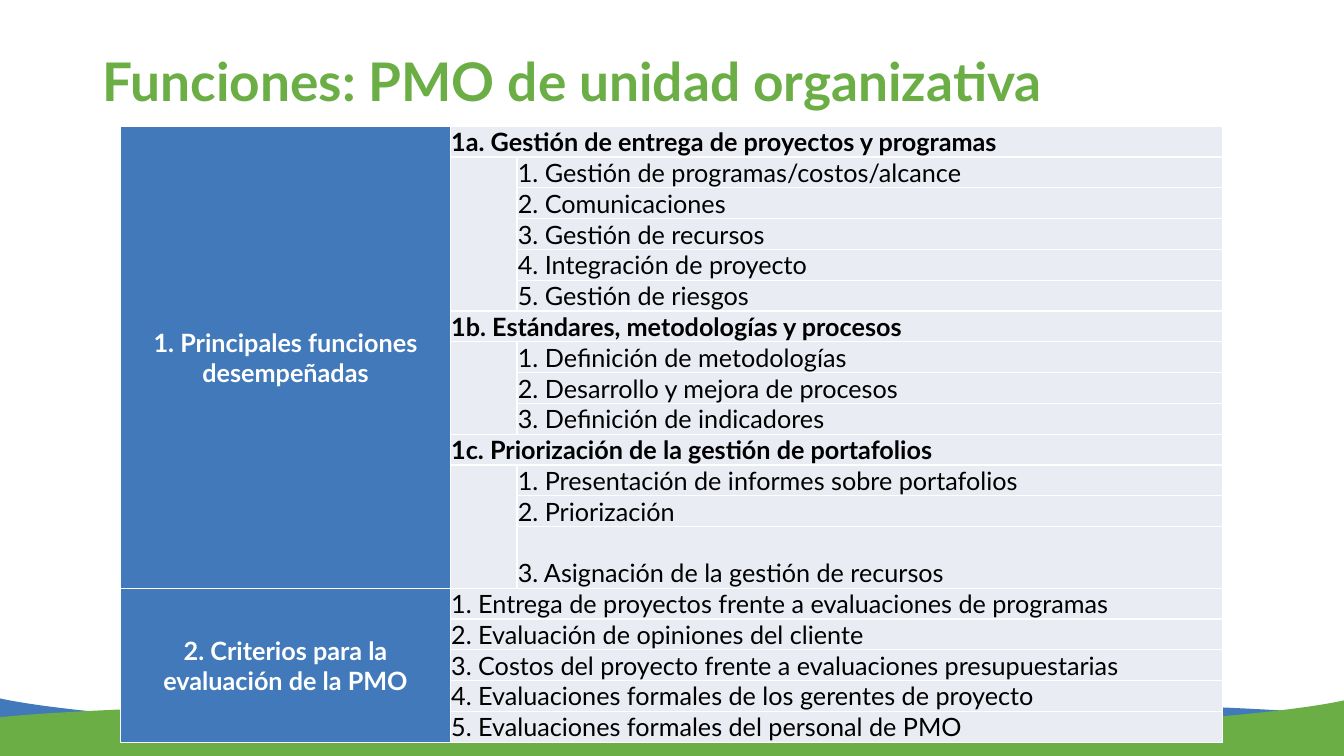
import pptx
import pptx.util
import pptx.dml.color
import pptx.enum.text
import pptx.oxml
import pptx.oxml.ns

Cm, Pt = pptx.util.Cm, pptx.util.Pt
ANCHOR = pptx.enum.text.MSO_ANCHOR
CENTER = pptx.enum.text.PP_ALIGN.CENTER
WIDTH, HEIGHT = 33.87, 19.05
BLUE, GREEN, PALE = "4179BB", "6BAE45", "E9ECF3"

TITLE = "Funciones: PMO de unidad organizativa"
FUNCTIONS = "1. Principales funciones desempeñadas"
CRITERIA = "2. Criterios para la evaluación de la PMO"
GROUPS = [
    ("1a. Gestión de entrega de proyectos y programas", [
        "1. Gestión de programas/costos/alcance",
        "2. Comunicaciones",
        "3. Gestión de recursos",
        "4. Integración de proyecto",
        "5. Gestión de riesgos"]),
    ("1b. Estándares, metodologías y procesos", [
        "1. Definición de metodologías",
        "2. Desarrollo y mejora de procesos",
        "3. Definición de indicadores"]),
    ("1c. Priorización de la gestión de portafolios", [
        "1. Presentación de informes sobre portafolios",
        "2. Priorización",
        "3. Asignación de la gestión de recursos"]),
]
CRITERIA_ITEMS = [
    "1. Entrega de proyectos frente a evaluaciones de programas",
    "2. Evaluación de opiniones del cliente",
    "3. Costos del proyecto frente a evaluaciones presupuestarias",
    "4. Evaluaciones formales de los gerentes de proyecto",
    "5. Evaluaciones formales del personal de PMO",
]
COLUMNS = [8.31, 1.68, 17.78]
TABLE_HEIGHT = 15.54

# Crest of the green wave: a start point, then three cubic curves
WAVE_START = (-0.03, 18.08)
WAVE_CURVES = [
    (1.93, 17.86), (7.77, 17.68), (11.73, 17.73),
    (15.7, 17.78), (20.04, 18.39), (23.75, 18.39),
    (27.43, 18.36), (32.13, 18.03), (WIDTH, 17.65),
]
WAVE_CORNERS = [(WIDTH, HEIGHT), (-0.03, HEIGHT)]


def rgb(color):
    return pptx.dml.color.RGBColor.from_string(color)


def xml(tag, attributes="", inner=""):
    ns = pptx.oxml.ns.nsdecls("a")
    return pptx.oxml.parse_xml(f"<a:{tag} {ns} {attributes}>{inner}</a:{tag}>")


def add_wave(s, color, mirrored=False):
    points = [WAVE_START] + WAVE_CURVES + WAVE_CORNERS
    if mirrored:
        points = [(WIDTH - x, min(y - 0.05, HEIGHT)) for x, y in points]
    points = [(Cm(x), Cm(y)) for x, y in points]
    builder = s.shapes.build_freeform(*points[0])
    builder.add_line_segments(points[1:], close=True)
    sp = builder.convert_to_shape()
    # Every three crest segments become one cubic curve
    lines = list(sp._element.iter(pptx.oxml.ns.qn("a:lnTo")))
    for i in range(0, len(WAVE_CURVES), 3):
        curve = xml("cubicBezTo")
        lines[i].addprevious(curve)
        for line in lines[i:i + 3]:
            curve.append(line[0])
            line.getparent().remove(line)
    sp.shadow.inherit = False
    sp.fill.solid()
    sp.fill.fore_color.rgb = rgb(color)
    sp.line.fill.background()


def set_font(p, size, color, bold):
    p.font.name, p.font.size, p.font.bold = "Lato", Pt(size), bold
    p.font.color.rgb = rgb(color)


def style_cell(cell, fill):
    """Narrow margins, white borders, solid fill."""
    cell.margin_left = cell.margin_right = Cm(0.02)
    cell.margin_top, cell.margin_bottom = Cm(0.01), 0
    cell.vertical_anchor = ANCHOR.BOTTOM
    white = '<a:solidFill><a:srgbClr val="FFFFFF"/></a:solidFill>'
    for side in ("lnL", "lnR", "lnT", "lnB"):
        cell._tc.get_or_add_tcPr().append(xml(side, 'w="12700"', white))
    cell.fill.solid()
    cell.fill.fore_color.rgb = rgb(fill)
    set_font(cell.text_frame.paragraphs[0], 18, "000000", False)


def write(cell, text, bold=False):
    p = cell.text_frame.paragraphs[0]
    p.text = text
    p.font.bold = bold


def add_section(table, first, last, text):
    """Blue heading cell over a run of rows."""
    cell = table.cell(first, 0)
    cell.merge(table.cell(last, 0))
    cell.vertical_anchor = ANCHOR.MIDDLE
    write(cell, text, True)
    p = cell.text_frame.paragraphs[0]
    p.alignment = CENTER
    p.font.color.rgb = rgb("FFFFFF")


def add_wide(table, row, text, bold=False):
    table.cell(row, 1).merge(table.cell(row, 2))
    write(table.cell(row, 1), text, bold)


def add_functions_table(s):
    split = sum(1 + len(items) for _, items in GROUPS)
    count = split + len(CRITERIA_ITEMS)
    # The last row of the first section is twice as tall
    heights = [TABLE_HEIGHT / (count + 1)] * count
    heights[split - 1] *= 2
    table = s.shapes.add_table(count, len(COLUMNS), Cm(3.04), Cm(3.18),
                               Cm(sum(COLUMNS)), Cm(TABLE_HEIGHT)).table
    for column, width in zip(table.columns, COLUMNS):
        column.width = Cm(width)
    for row, height in zip(table.rows, heights):
        row.height = Cm(height)
        for i, cell in enumerate(row.cells):
            style_cell(cell, PALE if i else BLUE)

    add_section(table, 0, split - 1, FUNCTIONS)
    add_section(table, split, count - 1, CRITERIA)
    row = 0
    for heading, items in GROUPS:
        add_wide(table, row, heading, True)
        table.cell(row + 1, 1).merge(table.cell(row + len(items), 1))
        for i, item in enumerate(items, row + 1):
            write(table.cell(i, 2), item)
        row += 1 + len(items)
    for i, item in enumerate(CRITERIA_ITEMS, split):
        add_wide(table, i, item)


def add_title(s):
    tb = s.shapes.add_textbox(Cm(2.33), Cm(0.74), Cm(29.21), Cm(2.77))
    tf = tb.text_frame
    tf.word_wrap = True
    tf.vertical_anchor = ANCHOR.MIDDLE
    p = tf.paragraphs[0]
    p.text = TITLE
    p.line_spacing = 0.9
    set_font(p, 38, GREEN, True)


def main():
    prs = pptx.Presentation()
    prs.slide_width, prs.slide_height = Cm(WIDTH), Cm(HEIGHT)
    s = prs.slides.add_slide(prs.slide_layouts[6])
    add_wave(s, "4279BB", mirrored=True)
    add_wave(s, GREEN)
    add_title(s)
    add_functions_table(s)
    prs.save("out.pptx")


if __name__ == "__main__":
    main()
